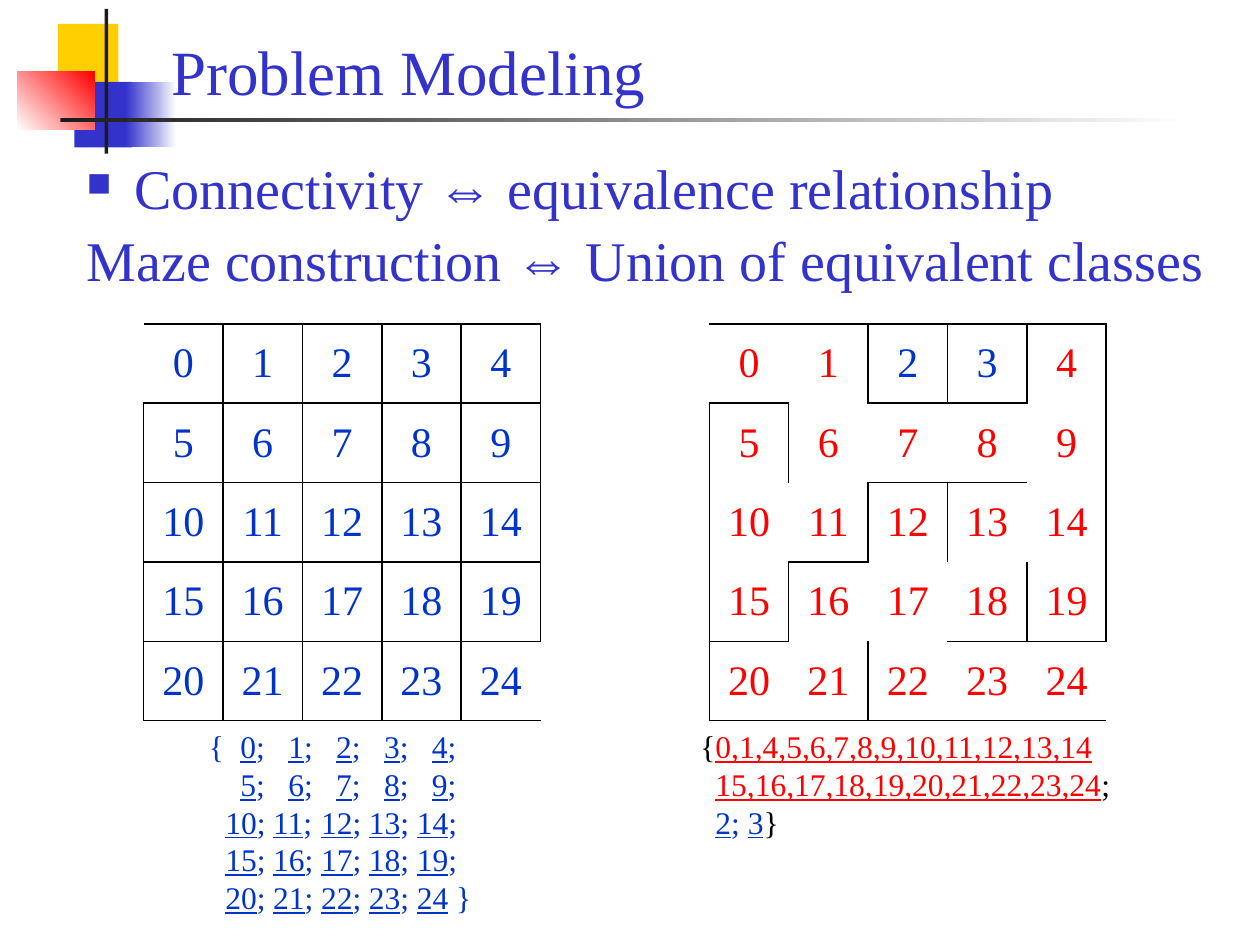
from lxml import etree
from pptx import Presentation
from pptx.dml.color import RGBColor
from pptx.enum.shapes import MSO_SHAPE
from pptx.enum.text import MSO_ANCHOR, PP_ALIGN
from pptx.oxml.ns import qn
from pptx.util import Inches, Pt

RECTANGLE = MSO_SHAPE.RECTANGLE
TOP, MIDDLE, BOTTOM = MSO_ANCHOR.TOP, MSO_ANCHOR.MIDDLE, MSO_ANCHOR.BOTTOM
CENTER = PP_ALIGN.CENTER
COLORS = {key: RGBColor.from_string(value) for key, value in {
    "yellow": "FFCF01", "indigo": "3333CC", "white": "FFFFFF", "bright": "FF0000",
    "ink": "1C1C1C", "blue": "0033CC", "black": "000000"}.items()}
FONT = "Times New Roman"
SIZE = 5            # maze cells per side
CELL = 0.63         # inches per maze cell
MAZE_TOP = 2.57
SETS_TOP = MAZE_TOP + SIZE * CELL


def add_run(paragraph, text, size, color, underline=False):
    run = paragraph.add_run()
    run.text = text
    run.font.name = FONT
    run.font.size = Pt(size)
    run.font.color.rgb = COLORS[color]
    if underline:
        run.font.underline = True


def add_frame(left, top, width, height, anchor=TOP):
    frame = slide.shapes.add_textbox(
        Inches(left), Inches(top), Inches(width), Inches(height)).text_frame
    frame.word_wrap = True
    frame.vertical_anchor = anchor
    return frame


prs = Presentation()
prs.slide_width, prs.slide_height = Inches(10), Inches(7.5)
slide = prs.slides.add_slide(prs.slide_layouts[6])

# Corner ornament: place, first colour, last colour, gradient angle
ornament = [
    ((0.46, 0.19, 0.48, 0.52), "yellow", None, 0),
    ((0.59, 0.65, 0.46, 0.52), "indigo", None, 0),
    ((1, 0.65, 0.4, 0.52), "indigo", "white", 0),
    ((0.14, 0.57, 0.61, 0.46), "white", "bright", 45),
    ((0.83, 0.07, 0.03, 1.15), "ink", None, 0),
    ((0.48, 0.94, 9, 0.03), "ink", "white", 0),
]
for place, start, end, angle in ornament:
    block = slide.shapes.add_shape(RECTANGLE, *map(Inches, place))
    block.shadow.inherit = False
    block.line.fill.background()
    if end:
        block.fill.gradient()
        block.fill.gradient_angle = angle
        for stop, color in zip(block.fill.gradient_stops, (start, end)):
            stop.color.rgb = COLORS[color]
    else:
        block.fill.solid()
        block.fill.fore_color.rgb = COLORS[start]

# Title and statements
title = add_frame(1.26, 0.16, 8.52, 0.75, BOTTOM)
add_run(title.paragraphs[0], "Problem Modeling", 36, "indigo")

statements = add_frame(0.59, 1.23, 9.14, 1.25)
for index, statement in enumerate(["Connectivity ⇔ equivalence relationship",
                                   "Maze construction ⇔ Union of equivalent classes"]):
    paragraph = statements.add_paragraph() if index else statements.paragraphs[0]
    paragraph.line_spacing = 0.9
    paragraph.space_before = Pt(6.4)
    add_run(paragraph, statement, 32, "indigo")
bulleted = statements.paragraphs[0]._p.get_or_add_pPr()
bulleted.set("marL", str(Inches(0.38)))
bulleted.set("indent", str(-Inches(0.38)))
bullet_color = etree.SubElement(bulleted, qn("a:buClr"))
etree.SubElement(bullet_color, qn("a:srgbClr"), val=str(COLORS["indigo"]))
etree.SubElement(bulleted, qn("a:buSzPct"), val="60000")
etree.SubElement(bulleted, qn("a:buChar"), char="■")

# Mazes: the standing walls of each cell, named L, R, T, B; "-" has none
closed_walls = ["LRTB"] * SIZE ** 2
closed_walls[0], closed_walls[-1] = "RTB", "LTB"
carved_walls = """
    TB  RT LRTB LRTB LRT
    LRT L  TB   TB   R
    L   RB LRT  LT   R
    LRB LT -    RB   LRB
    LTB RB LB   TB   TB
""".split()
mazes = [(1.14, closed_walls, range(SIZE ** 2)), (5.63, carved_walls, (2, 3))]
for left, walls, blue_numbers in mazes:
    maze = slide.shapes.add_table(SIZE, SIZE, Inches(left), Inches(MAZE_TOP),
                                  Inches(SIZE * CELL), Inches(SIZE * CELL)).table
    maze.first_row = maze.horz_banding = False
    for number, standing in enumerate(walls):
        cell = maze.cell(*divmod(number, SIZE))
        cell.vertical_anchor = MIDDLE
        cell.fill.background()
        paragraph = cell.text_frame.paragraphs[0]
        paragraph.alignment = CENTER
        add_run(paragraph, str(number), 24, "blue" if number in blue_numbers else "bright")
        properties = cell._tc.get_or_add_tcPr()
        for order, side in enumerate("LRTB"):
            wall = etree.Element(qn(f"a:ln{side}"), w=str(Pt(1)))
            if side in standing:
                ink = etree.SubElement(wall, qn("a:solidFill"))
                etree.SubElement(ink, qn("a:srgbClr"), val=str(COLORS["black"]))
            else:
                etree.SubElement(wall, qn("a:noFill"))
            properties.insert(order, wall)

# Singleton classes, one maze row per line, lined up with tab stops
singletons = add_frame(1.56, SETS_TOP, 2.31, 1.62)
for row in range(SIZE):
    paragraph = singletons.add_paragraph() if row else singletons.paragraphs[0]
    first = row * SIZE
    if row == 0:
        add_run(paragraph, "{", 18, "blue")
    for number in range(first, first + SIZE):
        add_run(paragraph, "\t", 18, "blue")
        add_run(paragraph, str(number), 18, "blue", underline=True)
        add_run(paragraph, " }" if number == SIZE ** 2 - 1 else ";", 18, "blue")
    stops = etree.SubElement(paragraph._p.get_or_add_pPr(), qn("a:tabLst"))
    start = 0.25 if first < 10 else 0.13
    for column in range(SIZE):
        etree.SubElement(stops, qn("a:tab"), pos=str(Inches(start + 0.38 * column)), algn="l")

# Merged classes, hanging from the opening brace
merged_lines = [
    [("{", "black", False), ("0,1,4,5,6,7,8,9,10,11,12,13,14", "bright", True)],
    [("15,16,17,18,19,20,21,22,23,24", "bright", True), (";", "black", False)],
    [("2", "blue", True), ("; ", "blue", False), ("3", "blue", True), ("}", "black", False)],
]
merged = add_frame(5.46, SETS_TOP, 3.55, 1.01)
for index, line in enumerate(merged_lines):
    paragraph = merged.add_paragraph() if index else merged.paragraphs[0]
    if index:
        paragraph._p.get_or_add_pPr().set("marL", str(Inches(0.12)))
    for text, color, underline in line:
        add_run(paragraph, text, 18, color, underline)

prs.save("out.pptx")
